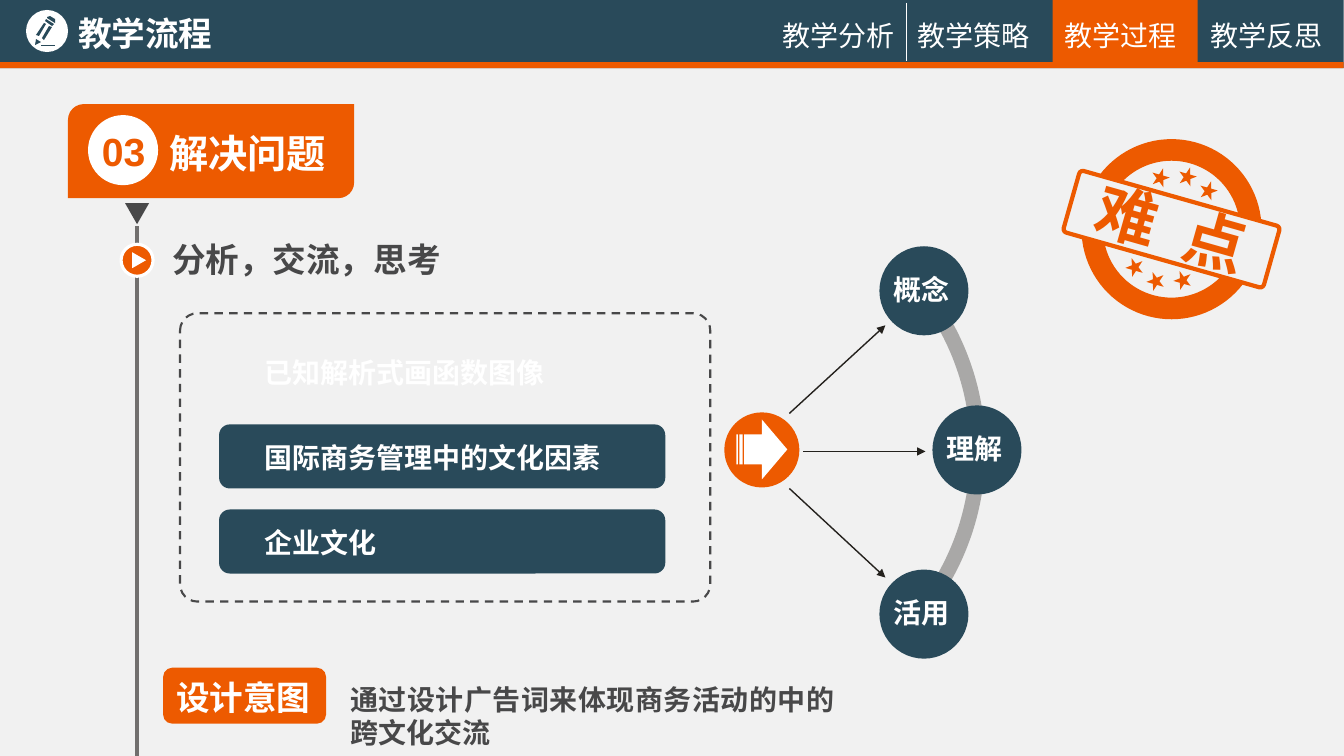
import math

import pptx
import pptx.dml.color
import pptx.enum.dml
import pptx.enum.shapes
import pptx.enum.text
import pptx.oxml
import pptx.oxml.ns
import pptx.util

PX = 914400 / 100.7
COLORS = {"page": "F1F1F1", "navy": "294A5A", "orange": "ED5A00", "white": "FFFFFF",
          "dark": "484849", "rail": "716F6E", "arc": "A9A8A7", "arrow": "24211D"}
CJK = "Noto Sans CJK SC"
SHAPE = pptx.enum.shapes.MSO_SHAPE
ALIGN = pptx.enum.text.PP_ALIGN


def px(value):
    return pptx.util.Emu(round(value * PX))


def rgb(name):
    return pptx.dml.color.RGBColor.from_string(COLORS[name])


class Board:
    """Holds the current slide and draws on it in whole px."""

    def __init__(self, slide):
        self.slide = slide
        self.shapes = slide.shapes
        slide.background.fill.solid()
        slide.background.fill.fore_color.rgb = rgb("page")

    def paint(self, shape, fill, line=None, width=1, dash=None):
        shape.shadow.inherit = False
        if fill:
            shape.fill.solid()
            shape.fill.fore_color.rgb = rgb(fill)
        else:
            shape.fill.background()
        if line:
            shape.line.color.rgb = rgb(line)
            shape.line.width = pptx.util.Pt(width)
            shape.line.dash_style = dash
        else:
            shape.line.fill.background()
        return shape

    def shape(self, kind, box, fill, turn=0, adjust=None, **outline):
        item = self.shapes.add_shape(kind, *map(px, box))
        item.rotation = turn
        if adjust is not None:
            item.adjustments[0] = adjust
        return self.paint(item, fill, **outline)

    def outline(self, points, fill):
        corners = [(px(x), px(y)) for x, y in points]
        builder = self.shapes.build_freeform(*corners[0], scale=1.0)
        builder.add_line_segments(corners[1:], close=True)
        return self.paint(builder.convert_to_shape(), fill)

    def line(self, start, end, color, width, arrow=False):
        item = self.shapes.add_connector(
            pptx.enum.shapes.MSO_CONNECTOR.STRAIGHT, *map(px, start + end))
        item.line.color.rgb = rgb(color)
        item.line.width = pptx.util.Pt(width)
        if arrow:
            ln = item.line._get_or_add_ln()
            ln.append(pptx.oxml.parse_xml(
                f'<a:tailEnd {pptx.oxml.ns.nsdecls("a")} type="triangle"/>'))
        item.element.spPr.append(pptx.oxml.parse_xml(
            f'<a:effectLst {pptx.oxml.ns.nsdecls("a")}/>'))

    def text(self, box, words, size, color="white", bold=True, align=ALIGN.LEFT,
             inset=(10, 5), turn=0, spacing=None, font=CJK, holder=None):
        holder = holder or self.shapes.add_textbox(0, 0, 0, 0)
        for name, value in zip(("left", "top", "width", "height"), box):
            setattr(holder, name, px(value))
        holder.rotation = turn
        frame = holder.text_frame
        frame.text = words
        side, end = map(px, inset)
        frame_format = {"word_wrap": True, "auto_size": pptx.enum.text.MSO_AUTO_SIZE.NONE,
                        "vertical_anchor": pptx.enum.text.MSO_ANCHOR.MIDDLE,
                        "margin_left": side, "margin_right": side,
                        "margin_top": end, "margin_bottom": end}
        for name, value in frame_format.items():
            setattr(frame, name, value)
        paragraph = frame.paragraphs[0]
        paragraph.alignment = align
        paragraph.line_spacing = pptx.util.Pt(spacing) if spacing else 1.0
        run = paragraph.runs[0]
        run.font.color.rgb = rgb(color)
        for name, value in {"size": pptx.util.Pt(size), "bold": bold, "name": font}.items():
            setattr(run.font, name, value)
        run.font._element.find(pptx.oxml.ns.qn("a:latin")).addnext(pptx.oxml.parse_xml(
            f'<a:ea {pptx.oxml.ns.nsdecls("a")} typeface="{font}"/>'))
        return holder


def draw_header(board):
    board.shape(SHAPE.RECTANGLE, (0, 0, 1343, 68), "navy")
    stripe = board.shape(SHAPE.RECTANGLE, (0, 62, 1343, 6), "orange")
    title = board.text((68, 8, 160, 50), "教学流程", 24, holder=board.shapes.title)
    stripe.element.addnext(title.element)

    # Navigation
    board.shape(SHAPE.RECTANGLE, (1052, 0, 145, 65), "orange")
    stages = {"教学分析": 782, "教学策略": 917, "教学过程": 1064, "教学反思": 1210}
    for stage, left in stages.items():
        board.text((left, 18, 124, 34), stage, 20, bold=False, inset=(0, 0))
    board.line((906, 3), (906, 61), "white", 0.75)

    # Pencil badge
    board.shape(SHAPE.OVAL, (26, 10, 42, 42), "white")
    pencil = [[(49, 26), (52, 27), (44, 40), (42, 38)],
              [(44, 23), (46, 24), (39, 36), (36, 35)],
              [(35, 45), (36, 39), (41, 42)],
              [(46, 19), (45, 21), (52, 26), (54, 24)],
              [(47, 17), (50, 16), (55, 19), (55, 23), (47, 18)],
              [(41, 45), (55, 45), (55, 46), (41, 46)]]
    for part in pencil:
        board.outline(part, "navy")


def draw_section(board):
    # Timeline
    board.line((137, 226), (137, 755), "rail", 3)
    board.shape(SHAPE.OVAL, (121, 244, 32, 32), "orange", line="white", width=2.25)
    board.outline([(132, 252), (146, 260), (132, 268)], "white")
    board.outline([(125, 203), (149, 203), (137, 224)], "dark")
    board.text((162, 234, 303, 50), "分析，交流，思考", 24, "dark", align=ALIGN.JUSTIFY)

    # Section heading
    board.shape(SHAPE.ROUND_2_DIAG_RECTANGLE, (68, 104, 286, 94), "orange")
    board.text((159, 124, 184, 57), "解决问题", 28)
    board.shape(SHAPE.OVAL, (88, 115, 70, 70), "white")
    board.text((88, 122, 71, 57), "03", 28, "orange", align=ALIGN.CENTER, font="Arial")

    # Design intent
    board.shape(SHAPE.ROUNDED_RECTANGLE, (163, 667, 163, 56), "orange")
    board.text((166, 671, 160, 50), "设计意图", 24)
    board.text((340, 677, 504, 77), "通过设计广告词来体现商务活动的中的跨文化交流", 20, "dark",
               align=ALIGN.JUSTIFY, spacing=23.5)


def draw_topics(board):
    board.shape(SHAPE.ROUNDED_RECTANGLE, (180, 313, 530, 288), None, adjust=0.06,
                line="dark", width=1.5, dash=pptx.enum.dml.MSO_LINE.DASH)
    topics = ["已知解析式画函数图像", "国际商务管理中的文化因素", "企业文化"]
    for row, topic in enumerate(topics):
        top = 339 + 85 * row
        if row:
            board.shape(SHAPE.ROUNDED_RECTANGLE, (219, top, 446, 64), "navy")
        board.text((254, top + 11, 360, 44), topic, 20, align=ALIGN.JUSTIFY)


def draw_goals(board):
    # Arc behind the three goals
    sweep = range(-39, 40)
    rim = [(721 + radius * math.cos(math.radians(angle)),
            450 + radius * math.sin(math.radians(angle)))
           for radius, angles in ((264, sweep), (249, reversed(sweep))) for angle in angles]
    board.outline(rim, "arc")

    goals = [("概念", 879, 246, (789, 413), (885, 325)),
             ("理解", 932, 405, (803, 451), (925, 451)),
             ("活用", 879, 569, (789, 488), (885, 577))]
    for goal, left, top, start, end in goals:
        board.shape(SHAPE.OVAL, (left, top, 89, 89), "navy")
        board.text((left + 4, top + 21, 81, 44), goal, 20, align=ALIGN.JUSTIFY)
        board.line(start, end, "arrow", 1, arrow=True)
    board.shape(SHAPE.OVAL, (724, 412, 75, 75), "orange")
    board.shape(SHAPE.STRIPED_RIGHT_ARROW, (736, 419, 51, 60), "white")


def draw_stamp(board):
    x, y, tilt = 1171, 229, 15.8
    board.shape(SHAPE.DONUT, (x - 90, y - 90, 180, 180), "orange", adjust=0.12)
    board.shape(SHAPE.ROUNDED_RECTANGLE, (x - 104, y - 32, 208, 64), "page", turn=tilt,
                adjust=0.06, line="orange", width=3)
    for side, letter in ((1, "点"), (-1, "难")):
        board.text((x + 44 * side - 40, y + 13 * side - 35, 80, 66), letter, 44, "orange",
                   align=ALIGN.CENTER, inset=(0, 0), turn=tilt)
        for dx, dy in ((37, -39), (16, -53), (-11, -52)):
            board.shape(SHAPE.STAR_5_POINT, (x + dx * side - 9, y + dy * side - 9, 18, 18),
                        "orange", turn=tilt if side > 0 else tilt + 180)


def main():
    deck = pptx.Presentation()
    deck.slide_width = pptx.util.Inches(13.34)
    deck.slide_height = pptx.util.Inches(7.5)
    board = Board(deck.slides.add_slide(deck.slide_layouts[5]))
    for draw in (draw_header, draw_section, draw_topics, draw_goals, draw_stamp):
        draw(board)
    deck.save("out.pptx")


if __name__ == "__main__":
    main()
